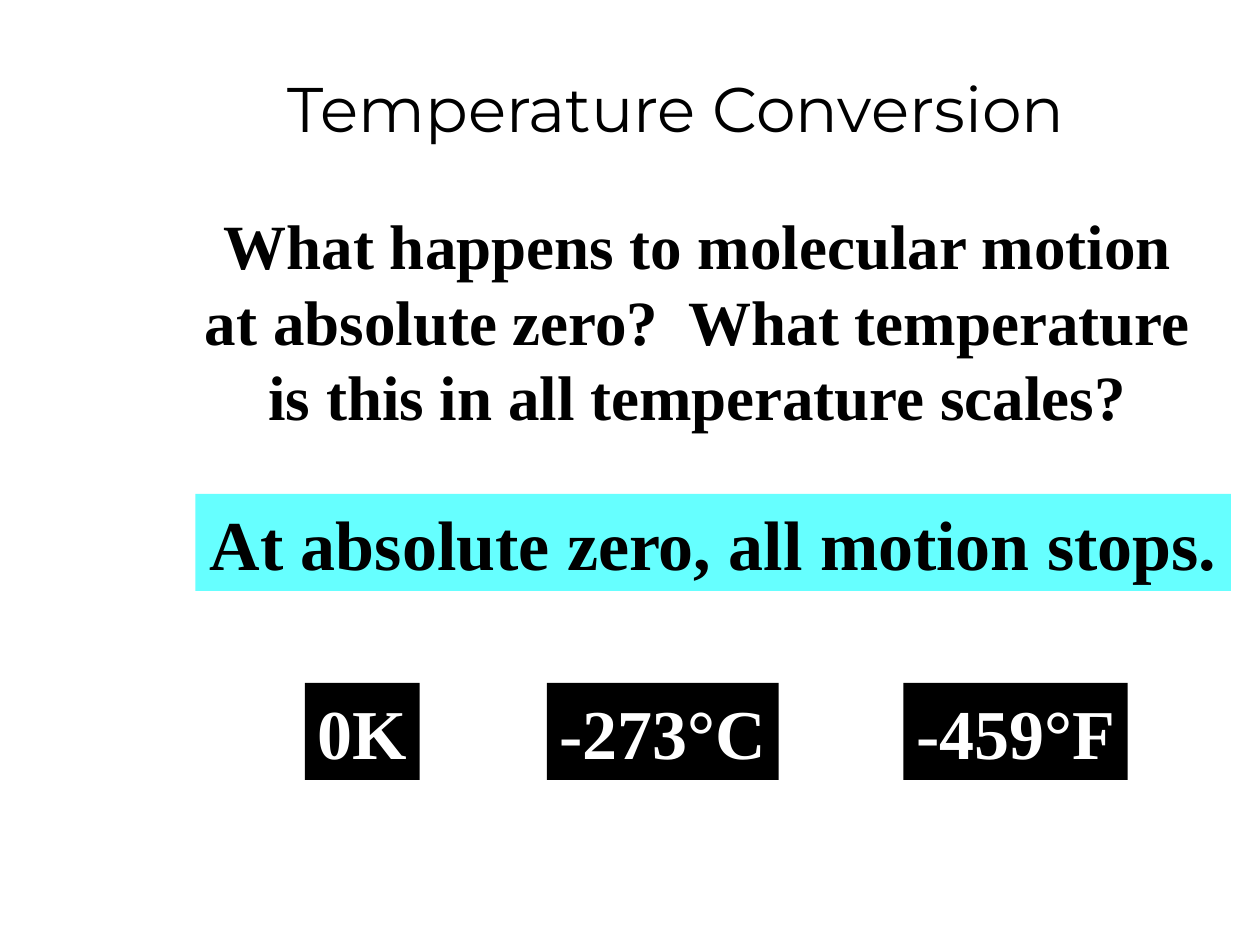
import pptx
import pptx.dml.color
import pptx.enum.shapes
import pptx.enum.text
import pptx.oxml
import pptx.oxml.ns
import pptx.util
from pptx.util import Inches

SERIF = "Times New Roman"
BLACK = "000000"


def color(hex_value):
    return pptx.dml.color.RGBColor.from_string(hex_value)


def write_lines(frame, lines, size, font_name, font_color, bold):
    """Fill a frame with centred, unwrapped lines in one style."""
    frame.word_wrap = False
    frame.vertical_anchor = pptx.enum.text.MSO_ANCHOR.TOP
    frame.text = "\n".join(lines)
    for paragraph in frame.paragraphs:
        paragraph.alignment = pptx.enum.text.PP_ALIGN.CENTER
        for run in paragraph.runs:
            run.font.size = pptx.util.Pt(size)
            run.font.name = font_name
            run.font.bold = bold
            run.font.color.rgb = color(font_color)


def add_title(slide, box, text):
    title = slide.shapes.add_textbox(*map(Inches, box))
    write_lines(title.text_frame, [text], 36, "Montserrat", BLACK, False)
    # Thin outline around the letters
    outline = pptx.oxml.parse_xml(
        f'<a:ln {pptx.oxml.ns.nsdecls("a")} w="9525"><a:solidFill>'
        f'<a:srgbClr val="{BLACK}"/></a:solidFill></a:ln>'
    )
    title.text_frame.paragraphs[0].runs[0].font._element.insert(0, outline)


def add_question(slide, box, lines):
    question = slide.shapes.add_textbox(*map(Inches, box))
    write_lines(question.text_frame, lines, 36, SERIF, BLACK, True)
    question.text_frame.auto_size = pptx.enum.text.MSO_AUTO_SIZE.SHAPE_TO_FIT_TEXT


def add_answer(slide, box, text, fill_color, font_color):
    answer = slide.shapes.add_shape(
        pptx.enum.shapes.MSO_SHAPE.RECTANGLE, *map(Inches, box)
    )
    answer.shadow.inherit = False
    answer.fill.solid()
    answer.fill.fore_color.rgb = color(fill_color)
    answer.line.fill.background()
    write_lines(answer.text_frame, [text], 40, SERIF, font_color, True)
    answer.text_frame.auto_size = pptx.enum.text.MSO_AUTO_SIZE.SHAPE_TO_FIT_TEXT


def add_scale_values(slide, top, height, values):
    for text, left, width in values:
        add_answer(slide, (left, top, width, height), text, BLACK, "FFFFFF")


def main():
    presentation = pptx.Presentation()
    presentation.slide_width = Inches(10)
    presentation.slide_height = Inches(7.5)
    slide = presentation.slides.add_slide(presentation.slide_layouts[6])

    # Title and question
    add_title(slide, (2, 0.5, 6.73, 0.71), "Temperature Conversion")
    add_question(slide, (1.51, 1.59, 8.05, 1.9), [
        "What happens to molecular motion",
        "at absolute zero?  What temperature",
        "is this in all temperature scales?",
    ])

    # Answer, then its value on each temperature scale
    add_answer(slide, (1.55, 3.92, 8.22, 0.77),
               "At absolute zero, all motion stops.", "66FFFF", BLACK)
    add_scale_values(slide, 5.42, 0.77, [
        ("0K", 2.42, 0.91),
        ("-273°C", 4.34, 1.84),
        ("-459°F", 7.17, 1.78),
    ])

    presentation.save("out.pptx")


if __name__ == "__main__":
    main()
